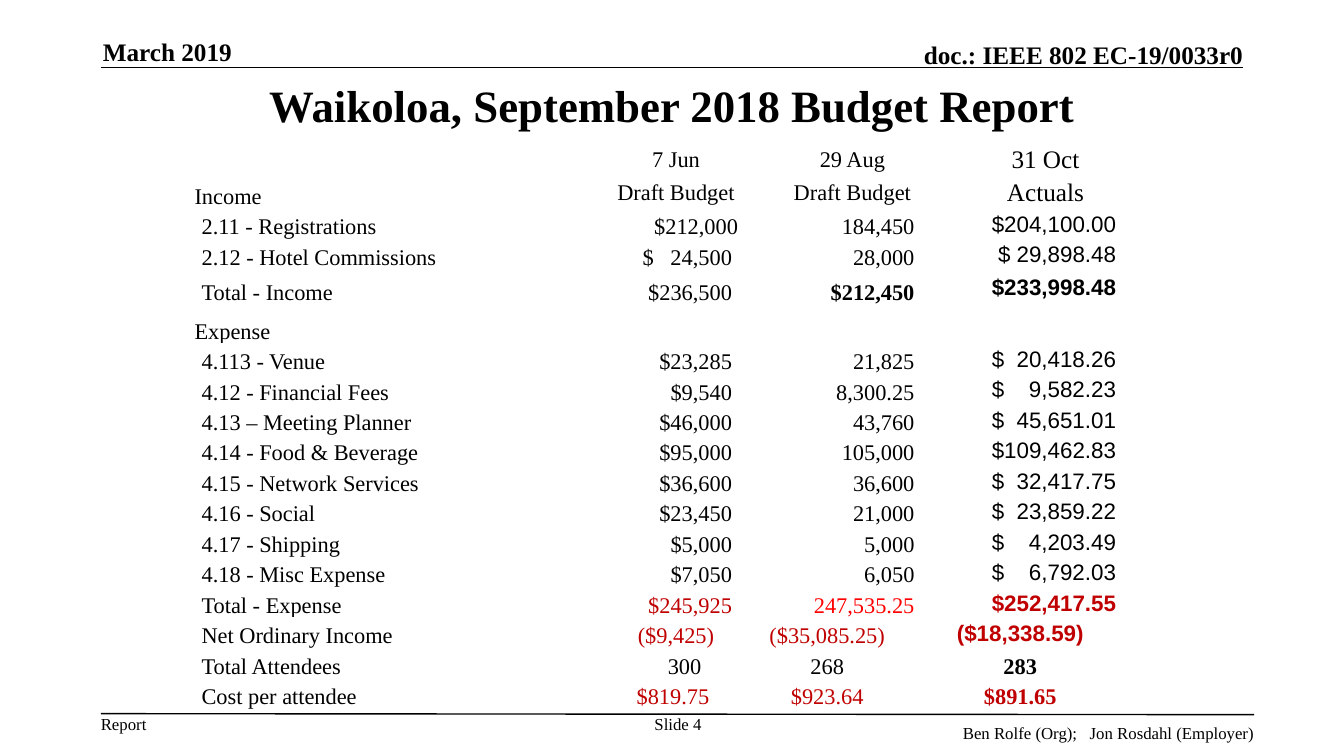
from collections import namedtuple
from dataclasses import dataclass

from lxml import etree
from pptx import Presentation
from pptx.dml.color import RGBColor
from pptx.enum.shapes import MSO_CONNECTOR
from pptx.enum.text import MSO_ANCHOR, PP_ALIGN
from pptx.oxml.ns import qn
from pptx.util import Inches, Pt

LEFT, CENTER, RIGHT = PP_ALIGN.LEFT, PP_ALIGN.CENTER, PP_ALIGN.RIGHT
TOP, MIDDLE, BOTTOM = MSO_ANCHOR.TOP, MSO_ANCHOR.MIDDLE, MSO_ANCHOR.BOTTOM
STRAIGHT = MSO_CONNECTOR.STRAIGHT
TITLE_ONLY = 5


@dataclass(frozen=True)
class Theme:
    """Colours, fonts and type sizes of the slide."""
    black: str = "000000"
    white: str = "FFFFFF"
    dark_red: str = "C00000"
    red: str = "FF0000"
    serif: str = "Times New Roman"
    sans: str = "Arial"
    title: int = 32
    header: int = 18
    table: int = 16
    footer: int = 12


THEME = Theme()
BLACK, DARK_RED = THEME.black, THEME.dark_red
Box = namedtuple("Box", "left top width height")

PAGE = Box(0, 0, 13.33, 7.5)
HEADER = Box(1, 0.36, 11.33, 0.31)
TITLE = Box(1, 0.75, 11.33, 0.58)
BUDGET = Box(1.92, 1.42, 10.53, 5.62)
FOOTER = Box(1, 7.08, 11.44, 0.4)

COLUMN_WIDTHS = (0.07, 1.52, 2.57, 1.25, 1.75, 0.08, 1.92, 1.36)
FIGURE_COLUMNS = (3, 4, 6)
EDGE = 0.01
PLAIN, TRAILING, SHIFTED = (EDGE, EDGE), (EDGE, 0.07), (0.18, EDGE)
HEADING_INDENT = (0.51, EDGE)
SECTION, ITEM = (0, 2), (1, 2)


@dataclass(frozen=True)
class Row:
    """One line of the budget: label, figures and how they are set."""
    label: str
    figures: tuple = ("", "", "")
    span: tuple = ITEM
    height: float = 0.3
    heading: bool = False
    align: PP_ALIGN = RIGHT
    june_insets: tuple = TRAILING
    colors: tuple = (BLACK, BLACK, BLACK)
    bold: tuple = (False, False, False)
    actual_font: str = THEME.sans


ALL_RED = (DARK_RED,) * 3
ACTUAL_BOLD = (False, False, True)
HEADING = dict(heading=True, align=CENTER, june_insets=PLAIN, actual_font=THEME.serif)

ROWS = (
    Row("", ("7 Jun", "29 Aug", "31 Oct"), (0, 1), 0.32, **HEADING),
    Row("Income", ("Draft Budget", "Draft Budget", "Actuals"), SECTION, 0.33, **HEADING),
    Row("2.11 - Registrations", ("$212,000", "184,450", "$204,100.00"), june_insets=PLAIN),
    Row("2.12 - Hotel Commissions", ("$   24,500", "28,000", "$ 29,898.48")),
    Row("Total - Income", ("$236,500", "$212,450", "$233,998.48"), height=0.35,
        bold=(False, True, True)),
    Row("Expense", span=SECTION, height=0.38),
    Row("4.113 - Venue", ("$23,285", "21,825", "$  20,418.26")),
    Row("4.12 - Financial Fees", ("$9,540", "8,300.25", "$    9,582.23")),
    Row("4.13 – Meeting Planner", ("$46,000", "43,760", "$  45,651.01")),
    Row("4.14 - Food & Beverage", ("$95,000", "105,000", "$109,462.83")),
    Row("4.15 - Network Services", ("$36,600", "36,600", "$  32,417.75")),
    Row("4.16 - Social", ("$23,450", "21,000", "$  23,859.22")),
    Row("4.17 - Shipping", ("$5,000", "5,000", "$    4,203.49")),
    Row("4.18 - Misc Expense", ("$7,050", "6,050", "$    6,792.03")),
    Row("Total - Expense", ("$245,925", "247,535.25", "$252,417.55"),
        colors=(DARK_RED, THEME.red, DARK_RED), bold=ACTUAL_BOLD),
    Row("Net Ordinary Income", ("($9,425)", "($35,085.25)", "($18,338.59)"), align=CENTER,
        june_insets=PLAIN, colors=ALL_RED, bold=ACTUAL_BOLD),
    Row("Total Attendees", ("300", "268", "283"), align=CENTER, june_insets=SHIFTED,
        bold=ACTUAL_BOLD, actual_font=THEME.serif),
    Row("Cost per attendee", ("$819.75", "$923.64", "$891.65"), align=CENTER,
        colors=ALL_RED, bold=ACTUAL_BOLD, actual_font=THEME.serif),
)


def style_paragraph(paragraph, text, size, align=LEFT, bold=False, color=BLACK, name=THEME.serif):
    """Write text into a paragraph and format it."""
    paragraph.text = text
    paragraph.alignment = align
    font = paragraph.font
    font.name, font.size, font.bold = name, Pt(size), bold
    font.color.rgb = RGBColor.from_string(color)


def add_text(slide, box, text, size, align=LEFT, anchor=TOP, bold=False):
    """Add a text box without insets."""
    frame = slide.shapes.add_textbox(*map(Inches, box)).text_frame
    frame.margin_left = frame.margin_right = frame.margin_top = frame.margin_bottom = 0
    frame.word_wrap = True
    frame.vertical_anchor = anchor
    style_paragraph(frame.paragraphs[0], text, size, align, bold)


def add_rule(slide, left, top, right, bottom):
    """Add a thin black line without a shadow."""
    line = slide.shapes.add_connector(STRAIGHT, *map(Inches, (left, top, right, bottom)))
    line.line.color.rgb = RGBColor.from_string(BLACK)
    line.line.width = Pt(1)
    etree.SubElement(line._element.spPr, qn("a:effectLst"))


def add_header(slide, box):
    """Place the date, the document number and the rule below them."""
    right, bottom = box.left + box.width, box.top + box.height
    add_rule(slide, box.left, bottom, right, bottom)
    add_text(slide, Box(box.left + 0.02, box.top, 2.73, 0.3), "March 2019",
             THEME.header, anchor=BOTTOM, bold=True)
    add_text(slide, Box(right - 7.1, box.top + 0.03, 7.1, 0.3), "doc.: IEEE 802 EC-19/0033r0",
             THEME.header, RIGHT, BOTTOM, True)


def add_title(slide, box):
    """Fill and move the title placeholder."""
    title = slide.shapes.title
    title.left, title.top, title.width, title.height = map(Inches, box)
    title.text_frame.vertical_anchor = MIDDLE
    style_paragraph(title.text_frame.paragraphs[0], "Waikoloa, September 2018 Budget Report",
                    THEME.title, CENTER, True)


def set_cell(cell, text="", size=THEME.table, anchor=BOTTOM, insets=PLAIN, **style):
    """Fill one table cell with formatted text."""
    cell.fill.solid()
    cell.fill.fore_color.rgb = RGBColor.from_string(THEME.white)
    cell.margin_left, cell.margin_right = map(Inches, insets)
    cell.margin_top, cell.margin_bottom = Inches(EDGE), 0
    cell.vertical_anchor = anchor
    style_paragraph(cell.text_frame.paragraphs[0], text, size, **style)


def fill_row(table, index, row):
    """Write the label and the three figures of one budget line."""
    for column in range(len(COLUMN_WIDTHS)):
        set_cell(table.cell(index, column))
    first, last = row.span
    table.cell(index, first).merge(table.cell(index, last))
    set_cell(table.cell(index, first), row.label)
    later_insets = HEADING_INDENT if row.heading else PLAIN
    insets = (row.june_insets, later_insets, later_insets)
    fonts = (THEME.serif, THEME.serif, row.actual_font)
    for position, column in enumerate(FIGURE_COLUMNS):
        centred = row.heading or fonts[position] == THEME.sans
        large = row.heading and column == FIGURE_COLUMNS[-1]
        set_cell(table.cell(index, column), row.figures[position],
                 THEME.header if large else THEME.table, MIDDLE if centred else BOTTOM,
                 insets[position], align=row.align, bold=row.bold[position],
                 color=row.colors[position], name=fonts[position])


def add_budget(slide, box):
    """Place the budget table, sharing the box height among its rows."""
    table = slide.shapes.add_table(len(ROWS), len(COLUMN_WIDTHS), *map(Inches, box)).table
    table.first_row = table.horz_banding = False
    for column, width in zip(table.columns, COLUMN_WIDTHS):
        column.width = Inches(width)
    unit = box.height / sum(row.height for row in ROWS)
    for index, row in enumerate(ROWS):
        table.rows[index].height = Inches(row.height * unit)
        fill_row(table, index, row)


def add_footer(slide, box):
    """Place the rule, the report label, the slide number and the authors."""
    right = box.left + box.width
    add_rule(slide, box.left, box.top, right, box.top + 0.01)
    add_text(slide, Box(box.left, box.top, 0.46, 0.2), "Report", THEME.footer)
    add_text(slide, Box(box.left + 5.34, box.top, 0.77, box.height), "Slide 4",
             THEME.footer, CENTER)
    add_text(slide, Box(right - 4.46, box.top + 0.09, 4.46, 0.2),
             "Ben Rolfe (Org);   Jon Rosdahl (Employer)", THEME.footer, RIGHT)


def main():
    """Build the budget report slide and save it."""
    presentation = Presentation()
    presentation.slide_width, presentation.slide_height = Inches(PAGE.width), Inches(PAGE.height)
    slide = presentation.slides.add_slide(presentation.slide_layouts[TITLE_ONLY])
    add_header(slide, HEADER)
    add_title(slide, TITLE)
    add_budget(slide, BUDGET)
    add_footer(slide, FOOTER)
    presentation.save("out.pptx")


if __name__ == "__main__":
    main()
